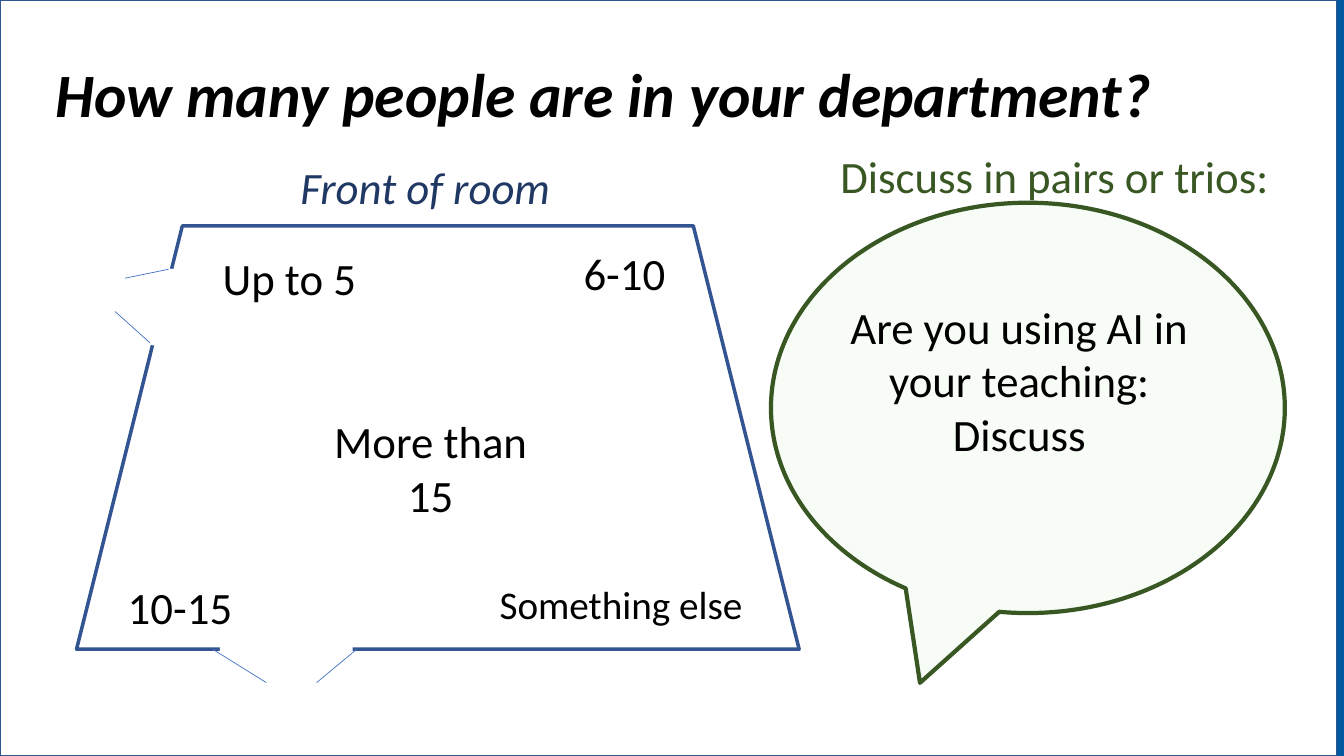
from lxml import etree
from pptx import Presentation
from pptx.dml.color import RGBColor
from pptx.enum.shapes import MSO_CONNECTOR, MSO_SHAPE
from pptx.enum.text import MSO_ANCHOR, MSO_AUTO_SIZE, PP_ALIGN
from pptx.oxml.ns import qn
from pptx.util import Cm, Pt

RECT = MSO_SHAPE.RECTANGLE
TRAP = MSO_SHAPE.TRAPEZOID
CALL = MSO_SHAPE.OVAL_CALLOUT
LINE = MSO_CONNECTOR.STRAIGHT
MID = MSO_ANCHOR.MIDDLE
FIXED = MSO_AUTO_SIZE.NONE
LEFT, MIDDLE, RIGHT = PP_ALIGN.LEFT, PP_ALIGN.CENTER, PP_ALIGN.RIGHT
BLACK, WHITE, BLUE, GREEN = "000000", "FFFFFF", "325491", "385723"


def tint(code):
    """Return the colour of a hex string."""
    return RGBColor.from_string(code)


def style(frame, words, size=32, color=BLACK, align=LEFT, bold=False, slant=False):
    """Fill a text frame with one styled paragraph."""
    frame.text = words
    frame.word_wrap = True
    para = frame.paragraphs[0]
    para.alignment = align
    font = para.runs[0].font
    font.name, font.size, font.color.rgb = "Calibri", Pt(size), tint(color)
    font.bold, font.italic = bold, slant
    return para


def label(slide, words, left, top, width, height=1.63, **look):
    """Add a text box."""
    box = slide.shapes.add_textbox(Cm(left), Cm(top), Cm(width), Cm(height))
    style(box.text_frame, words, **look)


def block(slide, kind, box, fill=None, line=None, weight=1):
    """Add a preset shape with an optional fill and outline."""
    shape = slide.shapes.add_shape(kind, *map(Cm, box))
    shape.shadow.inherit = False
    if fill:
        shape.fill.solid()
        shape.fill.fore_color.rgb = tint(fill)
    else:
        shape.fill.background()
    if line:
        shape.line.color.rgb = tint(line)
        shape.line.width = Pt(weight)
    else:
        shape.line.fill.background()
    return shape


def stroke(slide, ends):
    """Add a thin door line."""
    line = slide.shapes.add_connector(LINE, *map(Cm, ends))
    line.line.color.rgb = tint("4472C4")
    line.line.width = Pt(0.5)
    etree.SubElement(line._element.spPr, qn("a:effectLst"))


def header(slide, left, top, width, height):
    """Place and format the title."""
    title = slide.shapes.title
    title.left, title.top, title.width, title.height = map(Cm, (left, top, width, height))
    para = style(title.text_frame, "How many people are in your department?",
                 size=44, bold=True, slant=True)
    para.line_spacing = 0.9
    title.text_frame.vertical_anchor = MID
    title.text_frame.auto_size = FIXED
    slide.shapes._spTree.append(title._element)


def room(slide, left, top, width, height):
    """Draw the room plan with its doors and corner labels."""
    block(slide, TRAP, (left, top, width, height), line=BLUE, weight=2.5)
    doors = [(3.43, height, 4.78, 11.51), (7.06, height, 6.05, 11.51),
             (1.93, 3.02, 0.97, 2.16), (2.44, 1.07, 1.22, 1.32)]
    for x1, y1, x2, y2 in doors:
        stroke(slide, (left + x1, top + y1, left + x2, top + y2))
    gaps = [(2.08, 1.09, 0.41, 1.98, 14), (3.61, 10.46, 3.35, 0.28, 0)]
    for x, y, wide, high, turn in gaps:
        gap = block(slide, RECT, (left + x, top + y, wide, high), WHITE)
        gap.rotation = turn
    signs = [("Front of room", 5.39, -1.8, 7.72, 1.63, {"color": "203864", "slant": True}),
             ("Up to 5", 3.43, 0.51, 5.41, 1.63, {}),
             ("6-10", 11.13, 0.38, 3.96, 1.63, {"align": RIGHT}),
             ("More than 15", 6.22, 4.62, 5.41, 3, {"align": MIDDLE}),
             ("10-15", 1.04, 8.79, 5.41, 1.63, {}),
             ("Something else", 10.41, 8.81, 7.65, 1.45, {"size": 28})]
    for words, x, y, wide, high, look in signs:
        label(slide, words, left + x, top + y, wide, high, **look)


def bubble(slide, left, top, width, height):
    """Draw the speech bubble with its heading and question."""
    shape = block(slide, CALL, (left, top, width, height), "F8FCF6", GREEN, 3)
    shape.adjustments[0], shape.adjustments[1] = -0.21, 0.67
    label(slide, "Discuss in pairs or trios:", left + 1.5, top - 1.48, 12.19, color=GREEN)
    label(slide, "Are you using AI in your teaching: Discuss",
          left + 1.27, top + 2.31, 9.98, 4.37, align=MIDDLE)


def main():
    """Build and save the slide."""
    deck = Presentation()
    deck.slide_width, deck.slide_height = Cm(33.87), Cm(19.05)
    slide = deck.slides.add_slide(deck.slide_layouts[5])
    slide.background.fill.solid()
    slide.background.fill.fore_color.rgb = tint("00599E")
    block(slide, RECT, (0, 0, 33.68, 19.05), WHITE, BLUE)
    header(slide, 1.14, 0.91, 32.33, 3.12)
    room(slide, 1.93, 5.69, 18.21, 10.67)
    bubble(slide, 19.43, 5.11, 12.95, 10.34)
    deck.save("out.pptx")


if __name__ == "__main__":
    main()
